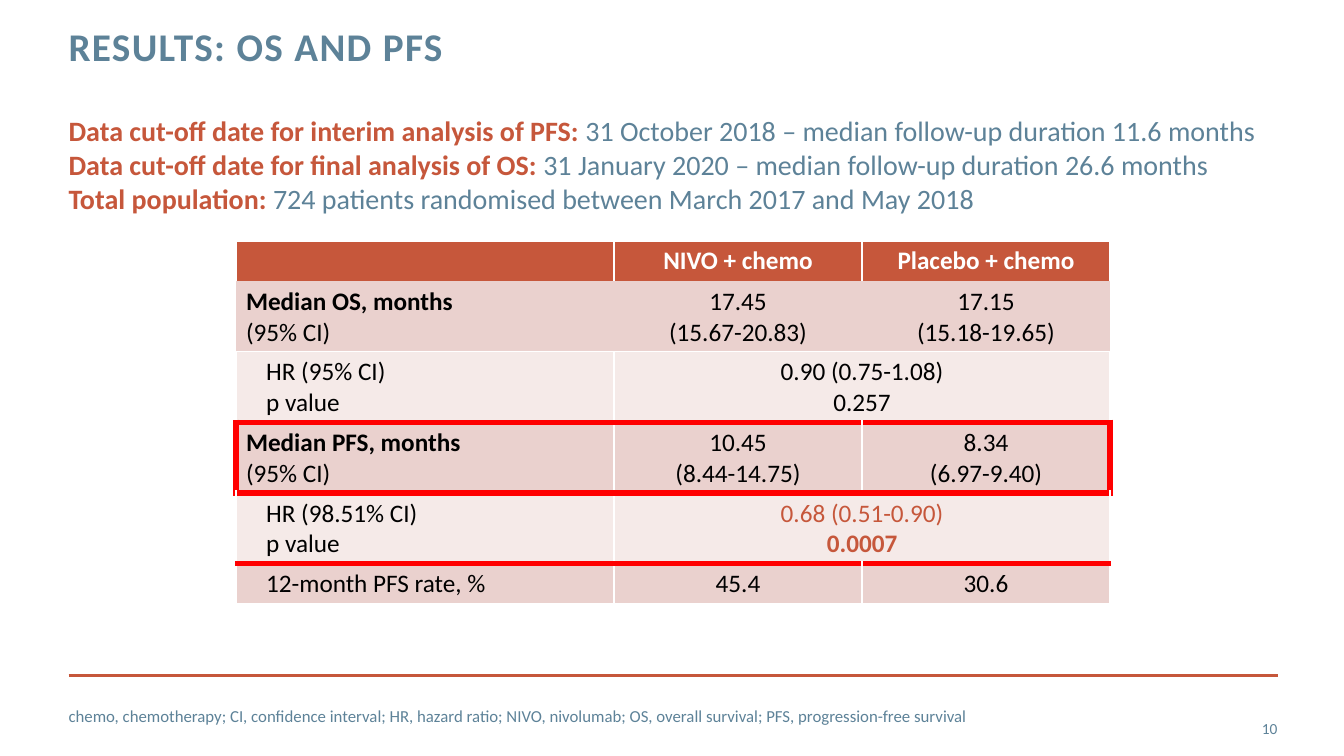
from lxml import etree
from pptx import Presentation
from pptx.dml.color import RGBColor
from pptx.enum.shapes import MSO_CONNECTOR
from pptx.enum.text import MSO_ANCHOR, PP_ALIGN
from pptx.oxml.ns import qn
from pptx.util import Inches, Pt

LEFT, CENTER, RIGHT = PP_ALIGN.LEFT, PP_ALIGN.CENTER, PP_ALIGN.RIGHT
TOP, MIDDLE = MSO_ANCHOR.TOP, MSO_ANCHOR.MIDDLE
STRAIGHT = MSO_CONNECTOR.STRAIGHT

RUST = RGBColor(0xC6, 0x57, 0x3B)
SLATE = RGBColor(0x5D, 0x82, 0x98)
ROSE = RGBColor(0xEA, 0xD1, 0xCE)
BLUSH = RGBColor(0xF5, 0xEA, 0xE8)
WHITE = RGBColor(0xFF, 0xFF, 0xFF)
BLACK = RGBColor(0, 0, 0)
RED = RGBColor(0xFF, 0, 0)

FONT = "Calibri"
SLIDE_WIDTH, SLIDE_HEIGHT = 13.33, 7.5
MARGIN, RULE_TOP, RULE_RIGHT = 0.68, 6.7, 12.68
TABLE_LEFT, TABLE_TOP = 2.34, 2.39
COLUMN_WIDTHS = (3.75, 2.46, 2.46)
ONE_LINE, TWO_LINES = 0.4, 0.7
INDENT = Inches(0.2)

TITLE = "RESULTS: OS AND PFS"
SLIDE_NUMBER = "10"
ABBREVIATIONS = (
    "chemo, chemotherapy; CI, confidence interval; HR, hazard ratio; NIVO, nivolumab; "
    "OS, overall survival; PFS, progression-free survival"
)
STUDY_FACTS = [
    ("Data cut-off date for interim analysis of PFS: ",
     "31 October 2018 – median follow-up duration 11.6 months"),
    ("Data cut-off date for final analysis of OS: ",
     "31 January 2020 – median follow-up duration 26.6 months"),
    ("Total population: ",
     "724 patients randomised between March 2017 and May 2018"),
]
RESULTS = [
    [[], ["NIVO + chemo"], ["Placebo + chemo"]],
    [["Median OS, months", "(95% CI)"], ["17.45", "(15.67-20.83)"], ["17.15", "(15.18-19.65)"]],
    [["HR (95% CI)", "p value"], ["0.90 (0.75-1.08)", "0.257"]],
    [["Median PFS, months", "(95% CI)"], ["10.45", "(8.44-14.75)"], ["8.34", "(6.97-9.40)"]],
    [["HR (98.51% CI)", "p value"], ["0.68 (0.51-0.90)", "0.0007"]],
    [["12-month PFS rate, %"], ["45.4"], ["30.6"]],
]
HEADER_ROW, OS_ROW, PFS_ROW, PFS_RATIO_ROW, RATE_ROW = 0, 1, 3, 4, 5
MEDIAN_ROWS = (OS_ROW, PFS_ROW)
RED_LINES = (PFS_ROW, PFS_RATIO_ROW, RATE_ROW)
HIGHLIGHTS = {"0.68 (0.51-0.90)", "0.0007"}
BOLD_TEXTS = {"Median OS, months", "Median PFS, months", "0.0007"}


def write(paragraph, text, size=18, color=BLACK, bold=False, align=LEFT, tracking=0):
    """Add one formatted run to a paragraph."""
    paragraph.alignment = align
    run = paragraph.add_run()
    run.text = text
    run.font.name, run.font.size, run.font.bold = FONT, Pt(size), bold
    run.font.color.rgb = color
    if tracking:
        run.font._element.set("spc", str(tracking * 100))


def add_frame(slide, left, top, width, height, anchor=TOP, insets=(0, 0, 0, 0)):
    """Add a wrapping text box and return its text frame."""
    box = slide.shapes.add_textbox(Inches(left), Inches(top), Inches(width), Inches(height))
    frame = box.text_frame
    frame.word_wrap, frame.vertical_anchor = True, anchor
    frame.margin_left, frame.margin_top, frame.margin_right, frame.margin_bottom = map(Inches, insets)
    return frame


def next_paragraph(frame, index):
    """Return the first paragraph, or a new one after it."""
    return frame.add_paragraph() if index else frame.paragraphs[0]


def set_borders(cell, row, column):
    """Draw the four cell edges: white grid, red around the PFS result."""
    colors = {"L": WHITE, "R": WHITE, "T": WHITE, "B": WHITE}
    if row == OS_ROW:
        colors = dict.fromkeys(colors)
    if row == HEADER_ROW:
        colors["B"] = None
    if row in RED_LINES:
        colors["T"] = RED
    if row + 1 in RED_LINES:
        colors["B"] = RED
    if row == PFS_ROW and column == 0:
        colors["L"] = RED
    if row == PFS_ROW and column == len(COLUMN_WIDTHS) - 1:
        colors["R"] = RED
    properties = cell._tc.get_or_add_tcPr()
    for index, (side, color) in enumerate(colors.items()):
        line = etree.Element(qn(f"a:ln{side}"), w=str(Pt(4.5 if color == RED else 1)))
        if color is None:
            etree.SubElement(line, qn("a:noFill"))
        else:
            fill = etree.SubElement(line, qn("a:solidFill"))
            etree.SubElement(fill, qn("a:srgbClr"), val=str(color))
        properties.insert(index, line)


def fill_cell(cell, lines, row, column):
    """Write the lines of one table cell."""
    header = row == HEADER_ROW
    for index, text in enumerate(lines):
        paragraph = next_paragraph(cell.text_frame, index)
        if column == 0 and row not in MEDIAN_ROWS:
            paragraph._p.get_or_add_pPr().set("marL", str(INDENT))
        color = WHITE if header else RUST if text in HIGHLIGHTS else BLACK
        write(paragraph, text, color=color, bold=header or text in BOLD_TEXTS,
              align=CENTER if column else LEFT)


def add_results(slide):
    """Build the table of survival results."""
    heights = [TWO_LINES if len(row[0]) == 2 else ONE_LINE for row in RESULTS]
    table = slide.shapes.add_table(
        len(RESULTS), len(COLUMN_WIDTHS), Inches(TABLE_LEFT), Inches(TABLE_TOP),
        Inches(sum(COLUMN_WIDTHS)), Inches(sum(heights))).table
    for column, width in zip(table.columns, COLUMN_WIDTHS):
        column.width = Inches(width)
    for row, (cells, height) in enumerate(zip(RESULTS, heights)):
        table.rows[row].height = Inches(height)
        if len(cells) < len(COLUMN_WIDTHS):
            table.cell(row, 1).merge(table.cell(row, 2))
            table.cell(row, 1).vertical_anchor = MIDDLE
        for column in range(len(COLUMN_WIDTHS)):
            cell = table.cell(row, column)
            cell.fill.solid()
            cell.fill.fore_color.rgb = RUST if row == HEADER_ROW else ROSE if row % 2 else BLUSH
            set_borders(cell, row, column)
            if column < len(cells):
                fill_cell(cell, cells[column], row, column)


def main():
    """Build and save the slide."""
    presentation = Presentation()
    presentation.slide_width, presentation.slide_height = Inches(SLIDE_WIDTH), Inches(SLIDE_HEIGHT)
    slide = presentation.slides.add_slide(presentation.slide_layouts[6])

    rule = slide.shapes.add_connector(
        STRAIGHT, Inches(MARGIN), Inches(RULE_TOP), Inches(RULE_RIGHT), Inches(RULE_TOP))
    rule.line.color.rgb, rule.line.width = RUST, Pt(2)
    etree.SubElement(rule._element.spPr, qn("a:effectLst"))

    number = add_frame(slide, 11.81, 7.03, 0.86, 0.4, anchor=MIDDLE)
    write(number.paragraphs[0], SLIDE_NUMBER, size=11, color=SLATE, align=RIGHT)

    title = add_frame(slide, MARGIN, 0.27, 9.85, 0.42).paragraphs[0]
    title.line_spacing = Pt(30)
    write(title, TITLE, size=28, color=SLATE, bold=True, tracking=1)

    footnote = add_frame(slide, MARGIN, 6.9, 11.65, 0.4, anchor=MIDDLE)
    write(footnote.paragraphs[0], ABBREVIATIONS, size=12, color=SLATE)

    facts = add_frame(slide, MARGIN, 1.08, 11.89, 1.11, insets=(0, 0.05, 0.1, 0.05))
    for index, (label, detail) in enumerate(STUDY_FACTS):
        paragraph = next_paragraph(facts, index)
        write(paragraph, label, size=20, color=RUST, bold=True)
        write(paragraph, detail, size=20, color=SLATE)

    add_results(slide)
    presentation.save("out.pptx")


if __name__ == "__main__":
    main()
